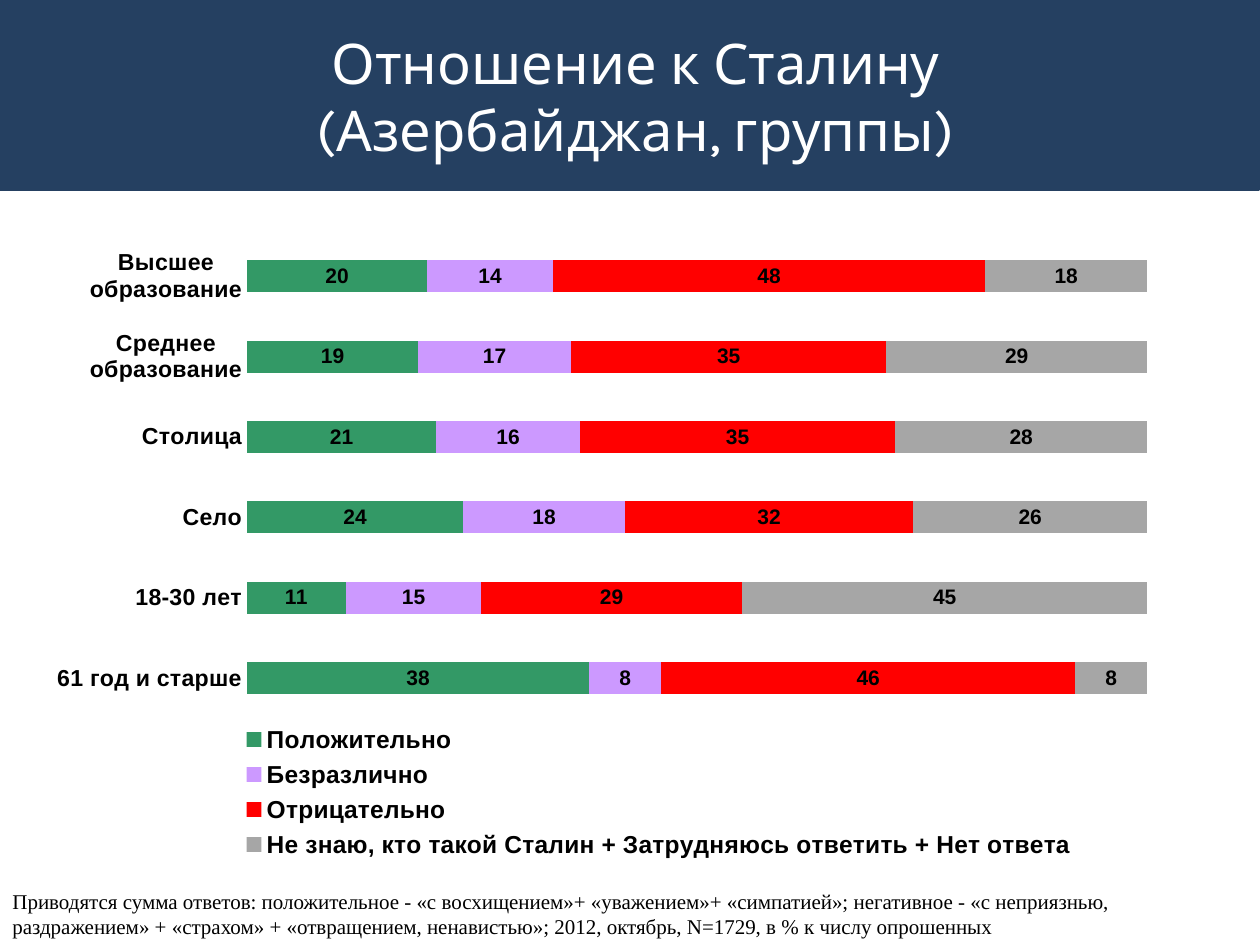
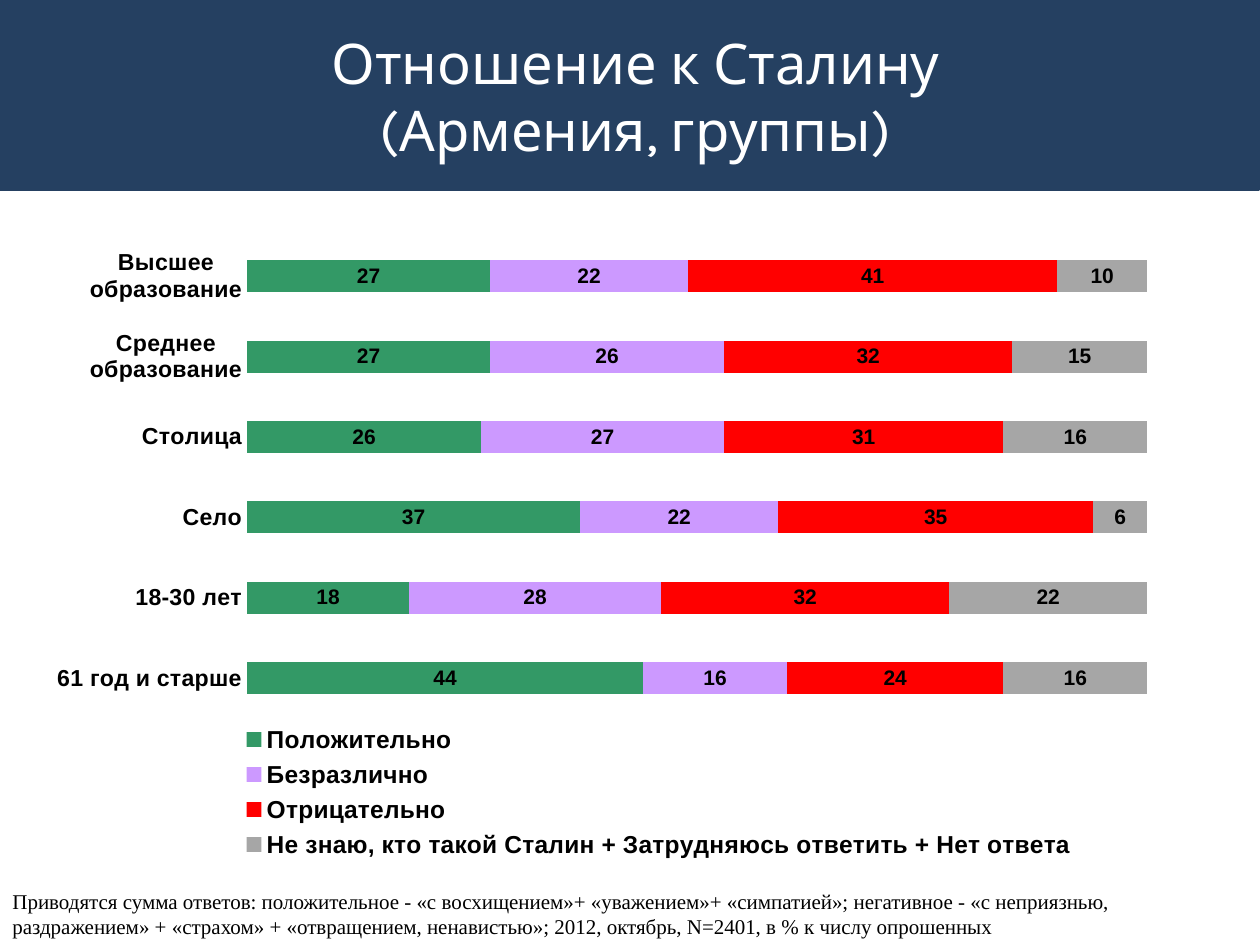
"""Build two slides comparing attitudes to Stalin across social groups."""
from dataclasses import dataclass

from lxml.etree import SubElement
from pptx import Presentation
from pptx.chart.chart import Chart
from pptx.chart.data import CategoryChartData
from pptx.dml.color import RGBColor
from pptx.enum.chart import XL_CHART_TYPE, XL_LABEL_POSITION, XL_LEGEND_POSITION, XL_TICK_MARK
from pptx.enum.shapes import MSO_SHAPE
from pptx.enum.text import MSO_ANCHOR, MSO_AUTO_SIZE, PP_ALIGN
from pptx.oxml.ns import qn
from pptx.slide import Slide
from pptx.text.text import Font
from pptx.util import Inches, Pt

NAVY = RGBColor(0x25, 0x40, 0x61)
WHITE = RGBColor(0xFF, 0xFF, 0xFF)
BLACK = RGBColor(0, 0, 0)
GREEN = RGBColor(0x33, 0x99, 0x66)
LILAC = RGBColor(0xCC, 0x99, 0xFF)
RED = RGBColor(0xFF, 0, 0)
GREY = RGBColor(0xA6, 0xA6, 0xA6)

GROUPS = ("Высшее образование", "Среднее образование", "Столица",
          "Село", "18-30 лет", "61 год и старше")
ANSWERS = (("Положительно", GREEN), ("Безразлично", LILAC), ("Отрицательно", RED),
           ("Не знаю, кто такой Сталин + Затрудняюсь ответить + Нет ответа", GREY))


@dataclass(frozen=True)
class Survey:
    """Results for one country, one row of shares per answer."""
    country: str
    respondents: int
    shares: tuple[tuple[int, ...], ...]


SURVEYS = (
    Survey("Азербайджан", 1729, (
        (20, 19, 21, 24, 11, 38), (14, 17, 16, 18, 15, 8),
        (48, 35, 35, 32, 29, 46), (18, 29, 28, 26, 45, 8))),
    Survey("Армения", 2401, (
        (27, 27, 26, 37, 18, 44), (22, 26, 27, 22, 28, 16),
        (41, 32, 31, 35, 32, 24), (10, 15, 16, 6, 22, 16))),
)


def style_font(font: Font, name: str, size: float, color: RGBColor, bold: bool = False) -> None:
    """Set the typeface, size, colour and weight of a font."""
    font.name, font.size, font.bold = name, Pt(size), bold
    font.color.rgb = color


def place_manually(parent, x: float, y: float, width: float, height: float,
                   inner: bool = False) -> None:
    """Give a plot area or legend a fixed place, in fractions of the chart."""
    for old in parent.findall(qn("c:layout")):
        parent.remove(old)
    layout = SubElement(parent, qn("c:layout"))
    parent.insert(0 if inner else 1, layout)
    manual = SubElement(layout, qn("c:manualLayout"))
    settings = [("layoutTarget", "inner")] if inner else []
    settings += [("xMode", "edge"), ("yMode", "edge"),
                 ("x", x), ("y", y), ("w", width), ("h", height)]
    for tag, value in settings:
        SubElement(manual, qn(f"c:{tag}")).set("val", str(value))


def add_title(page: Slide, country: str) -> None:
    """Draw the navy band with the two-line title on top of it."""
    band = page.shapes.add_shape(MSO_SHAPE.RECTANGLE, 0, 0, Inches(9.99), Inches(1.5))
    band.shadow.inherit = False
    band.fill.solid()
    band.fill.fore_color.rgb = NAVY
    band.line.color.rgb = NAVY
    band.line.width = Pt(2)
    title = page.shapes.title
    title.element.addprevious(band.element)
    title.left, title.top = Inches(0.2), Inches(0.13)
    title.width, title.height = Inches(9.69), Inches(1.26)
    frame = title.text_frame
    frame.word_wrap, frame.auto_size = True, MSO_AUTO_SIZE.NONE
    frame.vertical_anchor = MSO_ANCHOR.MIDDLE
    para = frame.paragraphs[0]
    para.alignment = PP_ALIGN.CENTER
    for number, line in enumerate(("Отношение к Сталину", f"({country}, группы)")):
        if number:
            para.add_line_break()
        span = para.add_run()
        span.text = line
        style_font(span.font, "Karla", 32, WHITE)


def format_axes(chart: Chart) -> None:
    """List the groups from the top and hide the percentage scale."""
    groups, percent = chart.category_axis, chart.value_axis
    groups.reverse_order = True
    groups.major_tick_mark = groups.minor_tick_mark = XL_TICK_MARK.NONE
    groups.format.line.fill.background()
    style_font(groups.tick_labels.font, "Arial", 13.2, BLACK, True)
    percent.minimum_scale, percent.maximum_scale, percent.major_unit = 0, 100, 10
    percent.visible = False
    percent.has_major_gridlines = True
    percent.major_gridlines.format.line.color.rgb = WHITE
    percent.major_gridlines.format.line.width = Pt(1)


def add_answers_chart(page: Slide, survey: Survey) -> None:
    """Add the stacked bars of answers by group."""
    data = CategoryChartData(number_format="0")
    data.categories = GROUPS
    for (answer, _), shares in zip(ANSWERS, survey.shares):
        data.add_series(answer, shares)
    chart = page.shapes.add_chart(XL_CHART_TYPE.BAR_STACKED, Inches(0.28), Inches(1.72),
                                  Inches(9.34), Inches(5.31), data).chart
    chart.has_title = False
    style_font(chart.font, "Arial", 16.2, BLACK, True)
    format_axes(chart)
    plot = chart.plots[0]
    plot.gap_width, plot.overlap, plot.vary_by_categories = 150, 100, False
    for series, (_, color) in zip(plot.series, ANSWERS):
        series.format.fill.solid()
        series.format.fill.fore_color.rgb = color
        labels = series.data_labels
        labels.show_value, labels.position = True, XL_LABEL_POSITION.CENTER
        style_font(labels.font, "Arial", 12, BLACK, True)
    chart.has_legend = True
    legend = chart.legend
    legend.position, legend.include_in_layout = XL_LEGEND_POSITION.BOTTOM, False
    style_font(legend.font, "Arial", 14, BLACK, True)
    place_manually(chart.element.find(".//" + qn("c:plotArea")),
                   0.18, 0.029, 0.765, 0.721, inner=True)
    place_manually(chart.element.find(".//" + qn("c:legend")), 0.17, 0.75, 0.72, 0.22)


def add_footnote(page: Slide, respondents: int) -> None:
    """Add the note on how answers were summed and how many people replied."""
    box = page.shapes.add_textbox(0, Inches(7), Inches(9.61), Inches(0.5))
    frame = box.text_frame
    frame.word_wrap, frame.vertical_anchor = True, MSO_ANCHOR.MIDDLE
    span = frame.paragraphs[0].add_run()
    span.text = ("Приводятся сумма ответов: положительное - «с восхищением»+ «уважением»+ "
                 "«симпатией»; негативное - «с неприязнью, раздражением» + «страхом» + "
                 "«отвращением, ненавистью»; 2012, октябрь, "
                 f"N={respondents}, в % к числу опрошенных")
    style_font(span.font, "Times New Roman", 12, BLACK)


def main() -> None:
    """Build one slide per survey and save the deck."""
    deck = Presentation()
    deck.slide_width, deck.slide_height = Inches(10), Inches(7.5)
    for survey in SURVEYS:
        page = deck.slides.add_slide(deck.slide_layouts[5])
        add_answers_chart(page, survey)
        add_title(page, survey.country)
        add_footnote(page, survey.respondents)
    deck.save("out.pptx")


if __name__ == "__main__":
    main()
